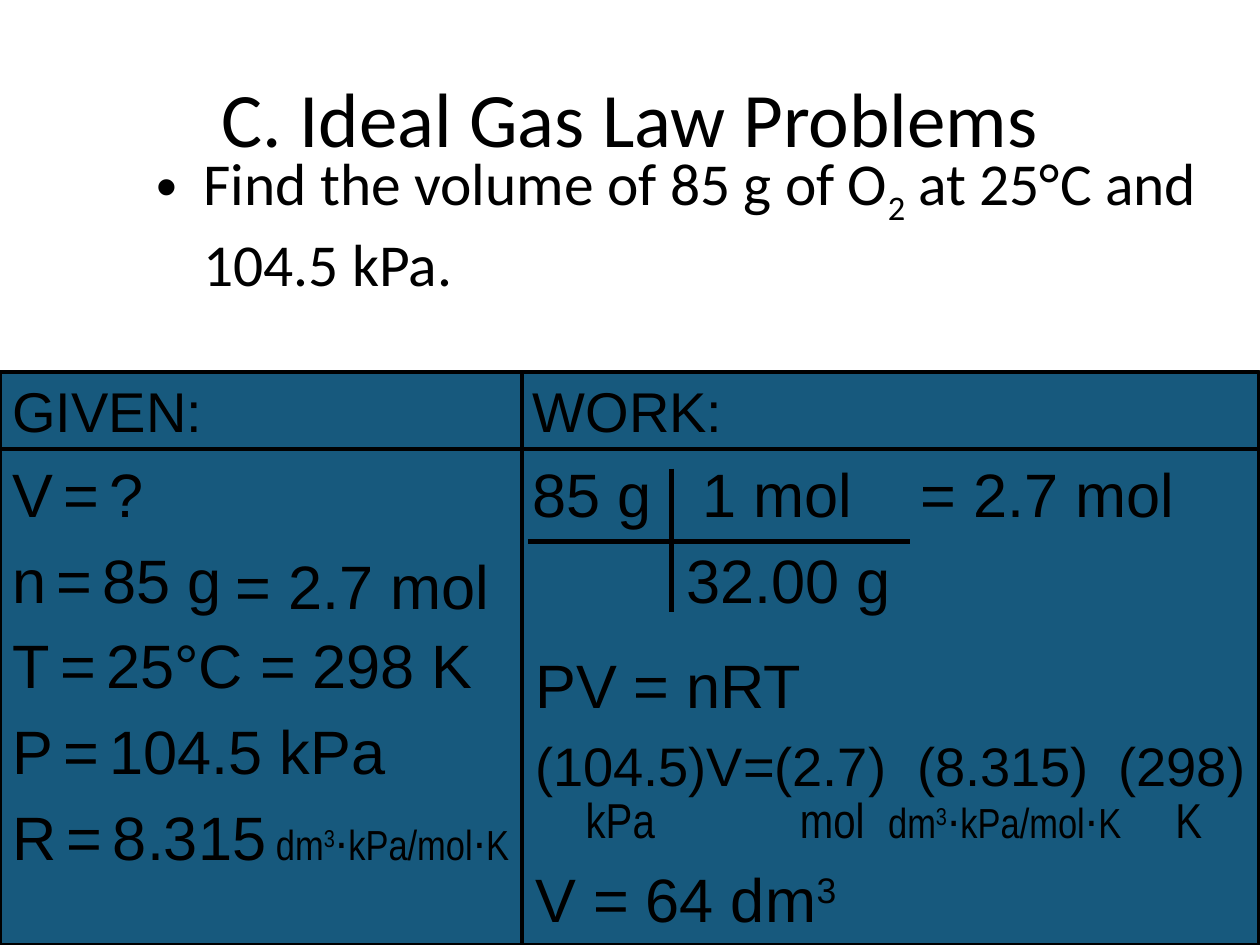
from lxml.etree import SubElement
from pptx import Presentation
from pptx.dml.color import RGBColor
from pptx.enum.shapes import MSO_CONNECTOR, MSO_SHAPE
from pptx.enum.text import MSO_AUTO_SIZE
from pptx.oxml.ns import qn
from pptx.util import Inches, Pt

COLORS = {"ink": "000000", "panel": "17597D"}
INK = RGBColor.from_string(COLORS["ink"])
ARIAL, NARROW, CALIBRI = "Arial", "Arial Narrow", "Calibri"


def fill_paragraph(p, runs, before=20, tabs=()):
    """Write (text, size, font, baseline %) runs; before is in % of a line, tabs in inches."""
    for text, size, font, baseline in runs:
        r = p.add_run()
        r.text = text
        r.font.size, r.font.name = Pt(size), font
        r.font.color.rgb = INK
        if baseline:
            r.font._element.set("baseline", str(baseline * 1000))
    if before:
        p.space_before = Pt(0)
        spacing = p._p.pPr.find(qn("a:spcBef"))
        spacing.remove(spacing[0])
        SubElement(spacing, qn("a:spcPct"), val=str(before * 1000))
    if tabs:
        tab_list = SubElement(p._p.get_or_add_pPr(), qn("a:tabLst"))
        for pos in tabs:
            SubElement(tab_list, qn("a:tab"), pos=str(Inches(pos)), algn="l")


def add_text(box, paragraphs, wrap=True):
    """Add a text box from (runs, options) paragraphs."""
    tf = slide.shapes.add_textbox(*map(Inches, box)).text_frame
    tf.word_wrap = wrap
    if not wrap:
        tf.auto_size = MSO_AUTO_SIZE.SHAPE_TO_FIT_TEXT
    for i, (runs, options) in enumerate(paragraphs):
        p = tf.add_paragraph() if i else tf.paragraphs[0]
        fill_paragraph(p, runs, **options)
        if options.get("before") == 0:
            p.line_spacing = 0.7 if len(paragraphs) > 1 else None


prs = Presentation()
prs.slide_width, prs.slide_height = Inches(10), Inches(7.5)
slide = prs.slides.add_slide(prs.slide_layouts[1])

# Panel behind the worked problem
sp = slide.shapes.add_shape(MSO_SHAPE.RECTANGLE, Inches(0), Inches(2.95), Inches(9.99), Inches(4.55))
sp.shadow.inherit = False
sp.fill.solid()
sp.fill.fore_color.rgb = RGBColor.from_string(COLORS["panel"])
sp.line.color.rgb = INK
sp.line.width = Pt(2.25)

# Title and question
title, body = slide.placeholders
title.left, title.top, title.width, title.height = map(Inches, (0.5, 0.3, 9, 1.25))
fill_paragraph(title.text_frame.paragraphs[0], [("C. Ideal Gas Law Problems", 44, CALIBRI, 0)], before=0)
body.left, body.top, body.width, body.height = map(Inches, (1.14, 1.11, 8.48, 1.56))
body.text_frame.auto_size = MSO_AUTO_SIZE.NONE
fill_paragraph(body.text_frame.paragraphs[0], [
    ("Find the volume of 85 g of O", 34, CALIBRI, 0),
    ("2", 34, CALIBRI, -25),
    (" at 25°C and 104.5 kPa.", 34, CALIBRI, 0),
], before=100)

# Panel dividers, then the conversion cross
for x1, y1, x2, y2, width in [
    (4.14, 2.95, 4.14, 7.5, 2.25),
    (0, 3.56, 10, 3.56, 2.25),
    (4.19, 4.3, 7.22, 4.3, 3),
    (5.33, 3.72, 5.33, 4.86, 3),
]:
    line = slide.shapes.add_connector(MSO_CONNECTOR.STRAIGHT, *map(Inches, (x1, y1, x2, y2)))
    line.line.color.rgb = INK
    line.line.width = Pt(width)
    SubElement(line._element.spPr, qn("a:effectLst"))

# Given values
units = [("dm", 24, NARROW, 0), ("3", 24, NARROW, 30), ("⋅kPa/mol⋅K", 24, NARROW, 0)]
given = [([("GIVEN:", 32, ARIAL, 0)], {})]
for symbol, value in [("V", "?"), ("n", "85 g"), ("T", "25°C = 298 K"), ("P", "104.5 kPa"), ("R", "8.315")]:
    gap = (" ", 21, ARIAL, 0)
    runs = [(symbol, 35, ARIAL, 0), gap, ("=", 35, ARIAL, 0), gap, (value, 35, ARIAL, 0)]
    if symbol == "R":
        runs += [(" ", 24, NARROW, 0), *units]
    given.append((runs, {}))
add_text((0, 2.94, 4.18, 3.86), given)
add_text((1.77, 4.3, 2.22, 0.68), [([("= 2.7 mol", 35, ARIAL, 0)], {"before": 0})], wrap=False)

# Work: conversion to moles, then the gas law
add_text((4.13, 2.94, 5.87, 2.1), [
    ([("WORK:", 32, ARIAL, 0)], {}),
    ([("85 g\t1 mol\t= 2.7 mol", 35, ARIAL, 0)], {"tabs": (1.35, 3.08)}),
    ([("\t32.00 g", 35, ARIAL, 0)], {"tabs": (1.22,)}),
])
add_text((4.15, 5.09, 5.85, 2.41), [
    ([("PV = nRT", 35, ARIAL, 0)], {}),
    ([("(104.5)V=(2.7)\t(8.315)\t(298)", 31, ARIAL, 0)], {"tabs": (3.03, 4.63)}),
    ([("\t", 35, ARIAL, 0), ("kPa\tmol\t", 28, NARROW, 0), *units, ("\tK", 28, NARROW, 0)],
     {"before": 0, "tabs": (0.4, 2.1, 2.8, 5.08)}),
    ([("V = 64 dm", 35, ARIAL, 0), ("3", 35, ARIAL, 30)], {}),
], wrap=False)

prs.save("out.pptx")
